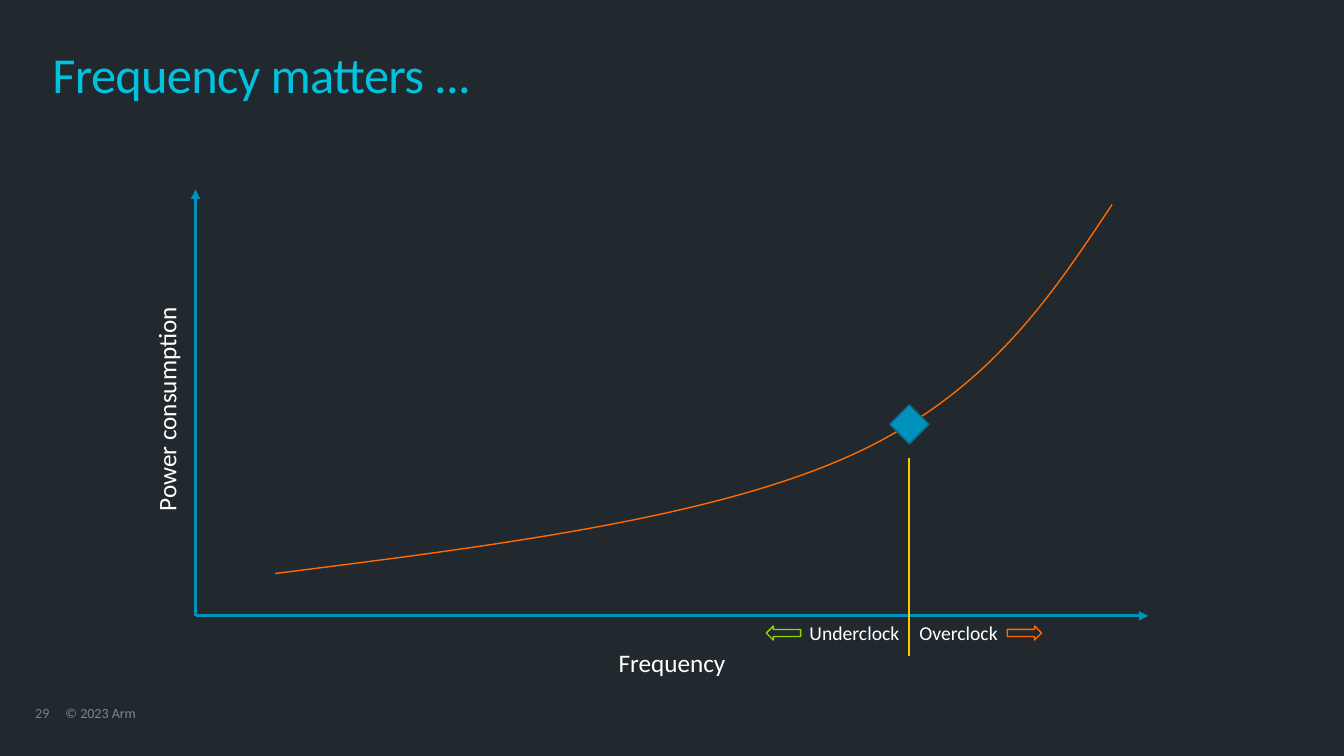
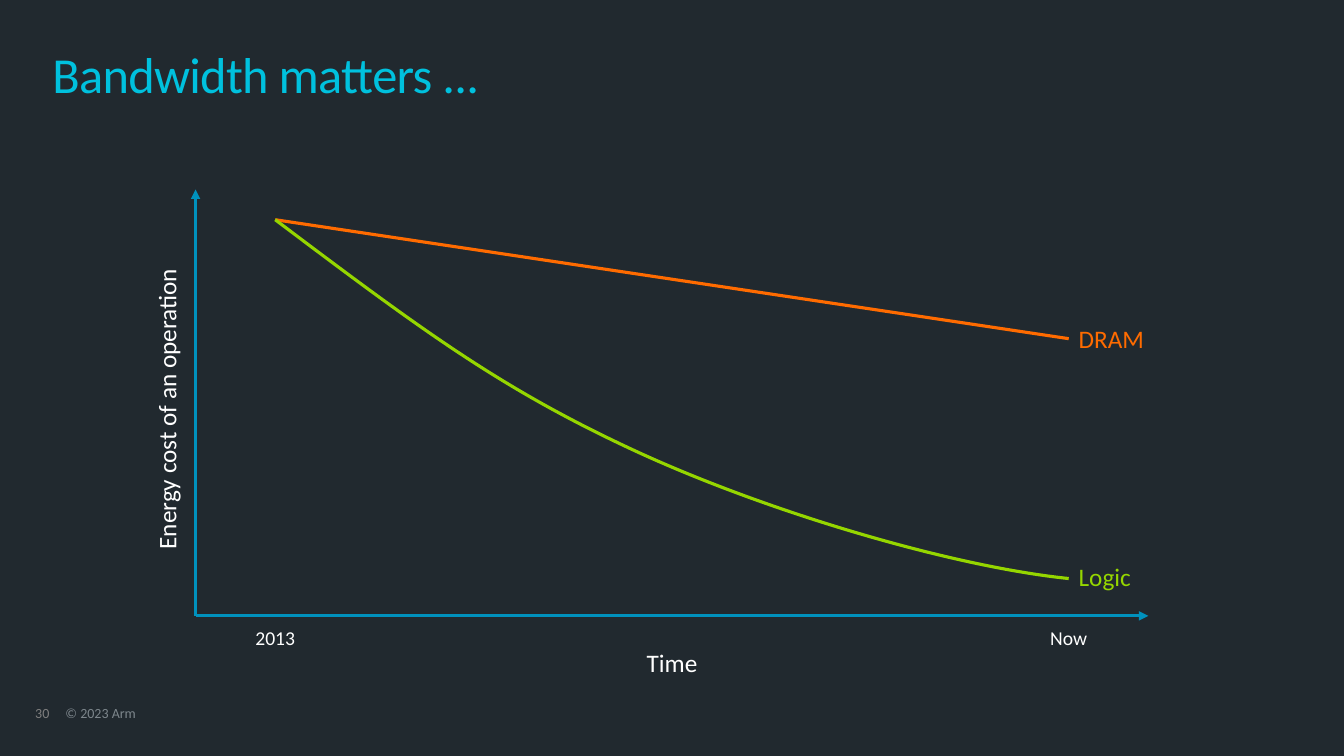
from pptx import Presentation
from pptx.dml.color import RGBColor
from pptx.enum.shapes import MSO_CONNECTOR, MSO_SHAPE
from pptx.enum.text import PP_ALIGN
from pptx.oxml.xmlchemy import OxmlElement
from pptx.util import Inches, Pt

COLORS = {
    "back": "21292F", "title": "00C1DE", "axis": "0091BD", "edge": "006B8C",
    "white": "FFFFFF", "orange": "FF6B00", "green": "95D600",
    "yellow": "FFC700", "number": "7F7F7F", "footer": "7D868C",
}
FONT = "Calibri"
LABEL = {"size": 18, "color": "white"}
SMALL = {"size": 14, "color": "white"}
TITLE = {"size": 36, "color": "title", "inset": False,
         "format": {"line_spacing": 0.85}}
FOOTER = {"size": 10, "color": "footer", "inset": False,
          "format": {"line_spacing": 0.9}}
CENTER = {"format": {"alignment": PP_ALIGN.CENTER}}
RIGHT = {"format": {"alignment": PP_ALIGN.RIGHT}}
PLOT = (1.94, 1.88, 9.45, 4.23)


def rgb(name):
    return RGBColor.from_string(COLORS[name])


def spot(plot, x, y):
    """Turn an offset inside the plot into a point on the slide."""
    return Inches(plot[0] + x), Inches(plot[1] + y)


def add_text(slide, words, box, size, color, inset=True, format=None):
    shape = slide.shapes.add_textbox(*map(Inches, box))
    frame = shape.text_frame
    frame.word_wrap = True
    if not inset:
        for side in ("left", "top", "right", "bottom"):
            setattr(frame, f"margin_{side}", 0)
    para = frame.paragraphs[0]
    for key, value in (format or {}).items():
        setattr(para, key, value)
    run = para.add_run()
    run.text = words
    for key, value in {"name": FONT, "size": Pt(size)}.items():
        setattr(run.font, key, value)
    run.font.color.rgb = rgb(color)
    return shape


def add_label(slide, plot, words, x, y, width, look):
    height = 0.4 if look["size"] == 18 else 0.34
    box = (plot[0] + x, plot[1] + y, width, height)
    return add_text(slide, words, box, **look)


def set_line(shape, color, width):
    shape.line.color.rgb = rgb(color)
    shape.line.width = Pt(width)


def add_line(slide, plot, start, end, color, width, arrow=False):
    line = slide.shapes.add_connector(
        MSO_CONNECTOR.STRAIGHT, *spot(plot, *start), *spot(plot, *end))
    set_line(line, color, width)
    if arrow:
        tail = OxmlElement("a:tailEnd")
        tail.set("type", "triangle")
        line.line.fill  # the line element exists once coloured
        line.element.spPr.find(".//{*}ln").append(tail)
    line.element.spPr.append(OxmlElement("a:effectLst"))


def add_curve(slide, plot, points, color, width):
    """Draw a Bézier curve: a start, then three points for each segment."""
    first, *rest = [spot(plot, *point) for point in points]
    outline = slide.shapes.build_freeform(*first)
    outline.add_line_segments(rest, close=False)
    curve = outline.convert_to_shape()
    steps = curve.element.xpath(".//a:lnTo")
    for i in range(0, len(steps), 3):
        bend = OxmlElement("a:cubicBezTo")
        steps[i].addprevious(bend)
        for step in steps[i:i + 3]:
            bend.append(step[0])
            step.getparent().remove(step)
    curve.shadow.inherit = False
    curve.fill.background()
    set_line(curve, color, width)


def add_mark(slide, plot, kind, center, size, line, fill=None, turn=0):
    x, y = center
    width, height = size
    mark = slide.shapes.add_shape(
        kind, *spot(plot, x - width / 2, y - height / 2), *map(Inches, size))
    mark.shadow.inherit = False
    mark.rotation = turn
    if fill:
        mark.fill.solid()
        mark.fill.fore_color.rgb = rgb(fill)
    else:
        mark.fill.background()
    set_line(mark, line, 1)


def add_base(deck, title, number):
    slide = deck.slides.add_slide(deck.slide_layouts[6])
    add_text(slide, str(number), (0.35, 7.01, 0.34, 0.15),
             **{**FOOTER, "color": "number"})
    add_text(slide, "© 2023 Arm", (0.65, 7.01, 5.07, 0.15), **FOOTER)
    head = add_text(slide, title, (0.52, 0.52, 12.28, 0.57), **TITLE)
    head.element.xpath(".//a:rPr")[0].set("spc", "-50")
    return slide


def add_axes(slide, plot, across, up):
    width, height = plot[2:]
    for end in ((0, 0), (width, height)):
        add_line(slide, plot, (0, height), end, "axis", 2.25, arrow=True)
    look = LABEL | CENTER
    add_label(slide, plot, across, 0, height + 0.26, width, look)
    side = add_label(slide, plot, up, -2.34, 1.98, 4.1, look)
    side.rotation = 270


def draw_power(slide, plot):
    add_axes(slide, plot, "Frequency", "Power consumption")
    base, mid = plot[3], 7.08
    add_curve(slide, plot, [
        (0.79, 3.81), (2.93, 3.54), (5.07, 3.27), (6.45, 2.66),
        (7.83, 2.05), (8.46, 1.1), (9.09, 0.15)], "orange", 1)
    add_mark(slide, plot, MSO_SHAPE.FLOWCHART_DECISION, (mid, 2.33),
             (0.39, 0.39), "edge", "axis")
    add_line(slide, plot, (mid, 2.66), (mid, base + 0.4), "yellow", 1.5)
    add_label(slide, plot, "Underclock", mid - 1.14, base, 1.14,
              SMALL | RIGHT)
    add_label(slide, plot, "Overclock", mid, base, 1, SMALL)
    for x, color, turn in ((mid - 1.25, "green", 180),
                           (mid + 1.14, "orange", 0)):
        add_mark(slide, plot, MSO_SHAPE.RIGHT_ARROW, (x, base + 0.17),
                 (0.34, 0.14), color, turn=turn)


def draw_energy(slide, plot):
    add_axes(slide, plot, "Time", "Energy cost of an operation")
    start, end = 0.79, 8.66
    add_line(slide, plot, (start, 0.3), (end, 1.48), "orange", 2.25)
    add_curve(slide, plot, [
        (start, 0.3), (2.25, 1.4), (3.02, 1.97), (4.33, 2.58),
        (5.64, 3.19), (7.49, 3.74), (end, 3.86)], "green", 2.25)
    for words, y, color in (("DRAM", 1.28, "orange"),
                            ("Logic", 3.64, "green")):
        add_label(slide, plot, words, end, y, 1.08, LABEL | {"color": color})
    for words, x in (("2013", start), ("Now", end)):
        add_label(slide, plot, words, x - 0.49, plot[3] + 0.05, 0.98,
                  SMALL | CENTER)


def main():
    deck = Presentation()
    deck.slide_width, deck.slide_height = Inches(13.33), Inches(7.5)
    back = deck.slide_master.background.fill
    back.solid()
    back.fore_color.rgb = rgb("back")
    pages = (("Frequency matters ...", draw_power),
             ("Bandwidth matters ...", draw_energy))
    for number, (title, draw) in enumerate(pages, 29):
        draw(add_base(deck, title, number), PLOT)
    deck.save("out.pptx")


if __name__ == "__main__":
    main()
